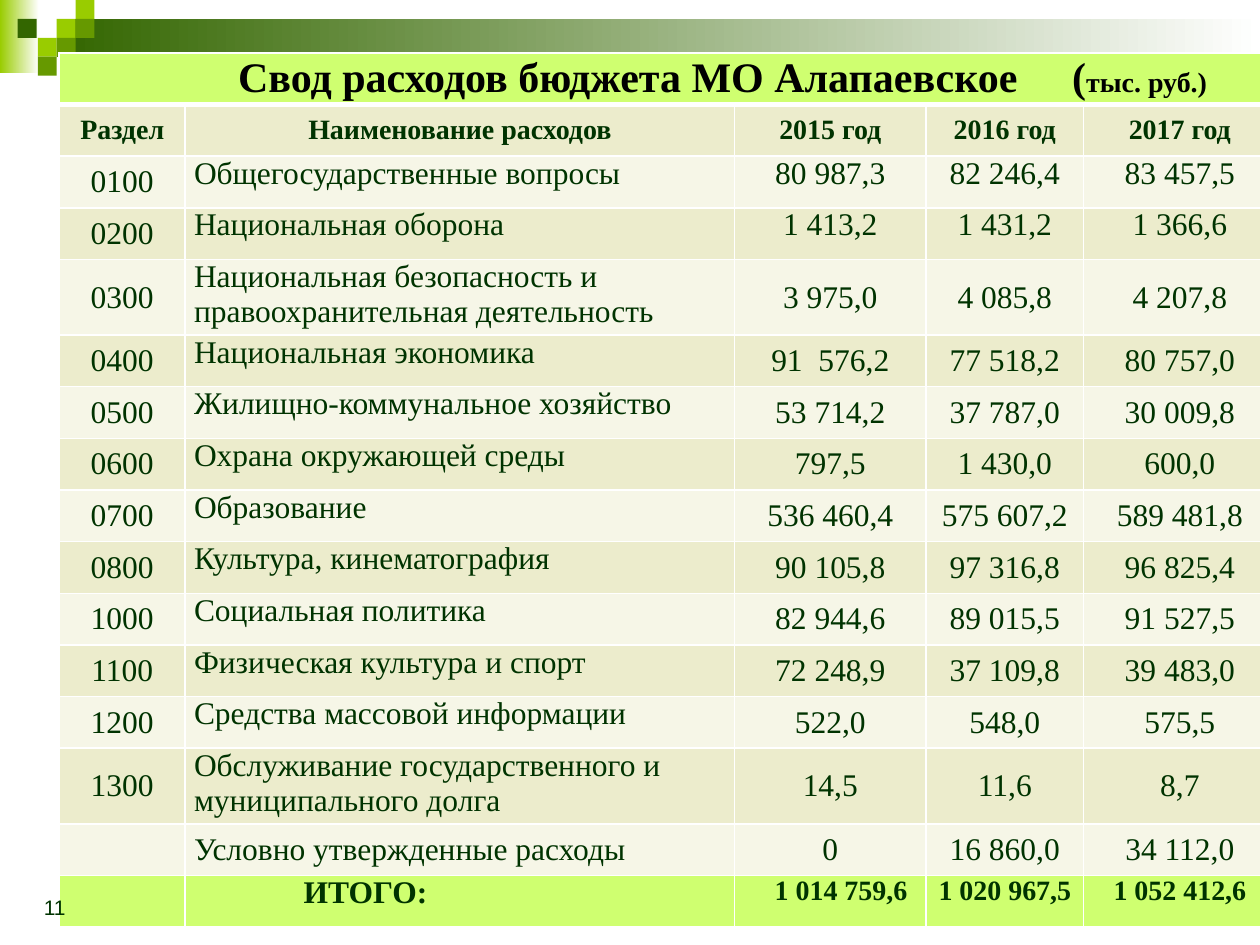
from typing import NamedTuple

from lxml.etree import SubElement
from pptx import Presentation
from pptx.dml.color import RGBColor
from pptx.enum.shapes import MSO_SHAPE
from pptx.enum.text import MSO_ANCHOR, PP_ALIGN
from pptx.oxml.ns import qn
from pptx.util import Inches, Pt

SERIF = "Times New Roman"
DARK, BLACK, WHITE = "003300", "000000", "FFFFFF"
LIME, SAND, CREAM = "CFFF70", "ECECCC", "F6F6E7"
FOREST, LEAF, GRASS = "336600", "669900", "99CC00"


class Tile(NamedTuple):
    left: float
    top: float
    width: float
    height: float
    color: str
    fades: bool = False


class Expense(NamedTuple):
    section: str
    name: str
    amounts: tuple[str, str, str]
    name_align: PP_ALIGN = PP_ALIGN.JUSTIFY
    name_anchor: MSO_ANCHOR = MSO_ANCHOR.TOP
    amount_anchor: MSO_ANCHOR = MSO_ANCHOR.MIDDLE
    height: float = 0.41


SIDE = 0.15
TILES = [
    Tile(0, 0, 0.31, 0.58, GRASS, True),
    Tile(0.45, 0.15, 9.55, 0.3, FOREST, True),
    Tile(0.45, 0.15, SIDE, SIDE, GRASS),
    Tile(0.6, 0, SIDE, SIDE, GRASS),
    Tile(0.6, 0.15, SIDE, SIDE, LEAF),
    Tile(0.3, 0.3, SIDE, SIDE, GRASS),
    Tile(0.14, 0.15, SIDE, SIDE, FOREST),
    Tile(0.45, 0.3, SIDE, SIDE, LEAF),
    Tile(0.3, 0.45, SIDE, SIDE, LEAF),
]

COLUMN_WIDTHS = [1, 4.36, 1.52, 1.25, 1.24]
ROW_HEIGHT, TALL_ROW = 0.41, 0.6
HEADINGS = ["Раздел", "Наименование расходов", "2015 год", "2016 год", "2017 год"]
TOTALS = ["1 014 759,6", "1 020 967,5", "1 052 412,6"]
LEFT, MIDDLE, TOP = PP_ALIGN.LEFT, MSO_ANCHOR.MIDDLE, MSO_ANCHOR.TOP
EXPENSES = [
    Expense("0100", "Общегосударственные вопросы",
            ("80 987,3", "82 246,4", "83 457,5"), amount_anchor=TOP),
    Expense("0200", "Национальная оборона",
            ("1 413,2", "1 431,2", "1 366,6"), amount_anchor=TOP),
    Expense("0300", "Национальная безопасность и правоохранительная деятельность",
            ("3 975,0", "4 085,8", "4 207,8"), LEFT, height=TALL_ROW),
    Expense("0400", "Национальная экономика", ("91  576,2", "77 518,2", "80 757,0")),
    Expense("0500", "Жилищно-коммунальное хозяйство",
            ("53 714,2", "37 787,0", "30 009,8")),
    Expense("0600", "Охрана окружающей среды", ("797,5", "1 430,0", "600,0")),
    Expense("0700", "Образование", ("536 460,4", "575 607,2", "589 481,8")),
    Expense("0800", "Культура, кинематография", ("90 105,8", "97 316,8", "96 825,4")),
    Expense("1000", "Социальная политика", ("82 944,6", "89 015,5", "91 527,5")),
    Expense("1100", "Физическая культура и спорт",
            ("72 248,9", "37 109,8", "39 483,0")),
    Expense("1200", "Средства массовой информации",
            ("522,0", "548,0", "575,5"), LEFT),
    Expense("1300", "Обслуживание государственного и муниципального долга",
            ("14,5", "11,6", "8,7"), LEFT, height=TALL_ROW),
    Expense("", "Условно утвержденные расходы",
            ("0", "16 860,0", "34 112,0"), LEFT, MIDDLE),
]


def rgb(color: str) -> RGBColor:
    return RGBColor.from_string(color)


def draw_tile(page, tile: Tile) -> None:
    shape = page.shapes.add_shape(
        MSO_SHAPE.RECTANGLE, *(Inches(length) for length in tile[:4]))
    shape.shadow.inherit = False
    shape.line.fill.background()
    if tile.fades:
        shape.fill.gradient()
        shape.fill.gradient_angle = 0
        for stop, color in zip(shape.fill.gradient_stops, (tile.color, WHITE)):
            stop.color.rgb = rgb(color)
    else:
        shape.fill.solid()
        shape.fill.fore_color.rgb = rgb(tile.color)


def add_span(para, text: str, color: str = DARK, **font_values) -> None:
    span = para.add_run()
    span.text = text
    span.font.color.rgb = rgb(color)
    for name, value in ({"name": SERIF, "size": Pt(18), "bold": False} | font_values).items():
        setattr(span.font, name, value)


def set_borders(cell, top: float = 1, bottom: float = 1) -> None:
    properties = cell._tc.get_or_add_tcPr()
    sides = {"a:lnL": 1, "a:lnR": 1, "a:lnT": top, "a:lnB": bottom}
    for position, (tag, width) in enumerate(sides.items()):
        line = SubElement(properties, qn(tag), w=str(Pt(width)))
        fill = SubElement(line, qn("a:solidFill"))
        SubElement(fill, qn("a:srgbClr"), val=WHITE)
        properties.insert(position, line)


def format_cell(cell, fill: str, anchor=MIDDLE, align=PP_ALIGN.CENTER,
                left: float = 0.07, top_border: float = 1, bottom_border: float = 1):
    values = {"margin_left": Inches(left), "margin_right": Inches(0.07),
              "margin_top": 0, "margin_bottom": 0, "vertical_anchor": anchor}
    for name, value in values.items():
        setattr(cell, name, value)
    cell.fill.solid()
    cell.fill.fore_color.rgb = rgb(fill)
    set_borders(cell, top_border, bottom_border)
    para = cell.text_frame.paragraphs[0]
    para.alignment = align
    return para


def fill_title(table) -> None:
    for column in range(1, len(COLUMN_WIDTHS)):
        format_cell(table.cell(0, column), LIME, bottom_border=3)
    title = table.cell(0, 0)
    title.merge(table.cell(0, len(COLUMN_WIDTHS) - 1))
    para = format_cell(title, LIME, align=LEFT, left=1.42, bottom_border=3)
    tabs = SubElement(para._p.get_or_add_pPr(), qn("a:tabLst"))
    SubElement(tabs, qn("a:tab"), pos=str(Inches(6.62)), algn="l")
    add_span(para, "Свод расходов бюджета МО Алапаевское\t(", BLACK, size=Pt(24), bold=True)
    add_span(para, "тыс. руб.)", BLACK, size=Pt(16), bold=True)


def fill_expense(table, row: int, expense: Expense) -> None:
    fill = SAND if row % 2 else CREAM
    layouts = [(expense.section, MIDDLE, PP_ALIGN.CENTER),
               (expense.name, expense.name_anchor, expense.name_align)]
    layouts += [(amount, expense.amount_anchor, PP_ALIGN.CENTER)
                for amount in expense.amounts]
    for column, (text, anchor, align) in enumerate(layouts):
        para = format_cell(table.cell(row, column), fill, anchor, align)
        if text:
            add_span(para, text)


def fill_totals(table, row: int) -> None:
    format_cell(table.cell(row, 0), LIME)
    para = format_cell(table.cell(row, 1), LIME, TOP, LEFT, left=0.94)
    add_span(para, "ИТОГО:", bold=True)
    for column, total in enumerate(TOTALS, start=2):
        left = 0.24 if column == 2 else 0.07
        para = format_cell(table.cell(row, column), LIME, TOP, left=left)
        add_span(para, total, size=Pt(16), bold=True)


def draw_table(page) -> None:
    heights = [ROW_HEIGHT] * 2 + [expense.height for expense in EXPENSES] + [ROW_HEIGHT]
    table = page.shapes.add_table(
        len(heights), len(COLUMN_WIDTHS), Inches(0.47), Inches(0.42),
        Inches(sum(COLUMN_WIDTHS)), Inches(sum(heights))).table
    table.first_row = table.horz_banding = False
    for column, width in zip(table.columns, COLUMN_WIDTHS):
        column.width = Inches(width)
    for row, height in zip(table.rows, heights):
        row.height = Inches(height)

    fill_title(table)
    for column, heading in enumerate(HEADINGS):
        para = format_cell(table.cell(1, column), SAND, top_border=3)
        add_span(para, heading, size=Pt(16), bold=True)
    for row, expense in enumerate(EXPENSES, start=2):
        fill_expense(table, row, expense)
    fill_totals(table, len(heights) - 1)


def draw_page_number(page) -> None:
    box = page.shapes.add_textbox(Inches(0.25), Inches(6.83), Inches(2.58), Inches(0.52))
    box.text_frame.word_wrap = True
    box.text_frame.vertical_anchor = MSO_ANCHOR.BOTTOM
    add_span(box.text_frame.paragraphs[0], "11", name="Arial", size=Pt(12))


def main() -> None:
    deck = Presentation()
    deck.slide_width, deck.slide_height = Inches(10), Inches(7.5)
    page = deck.slides.add_slide(deck.slide_layouts[6])
    # Corner mosaic and fading bar
    for tile in TILES:
        draw_tile(page, tile)
    # Budget table and page number
    draw_table(page)
    draw_page_number(page)
    deck.save("out.pptx")


if __name__ == "__main__":
    main()
